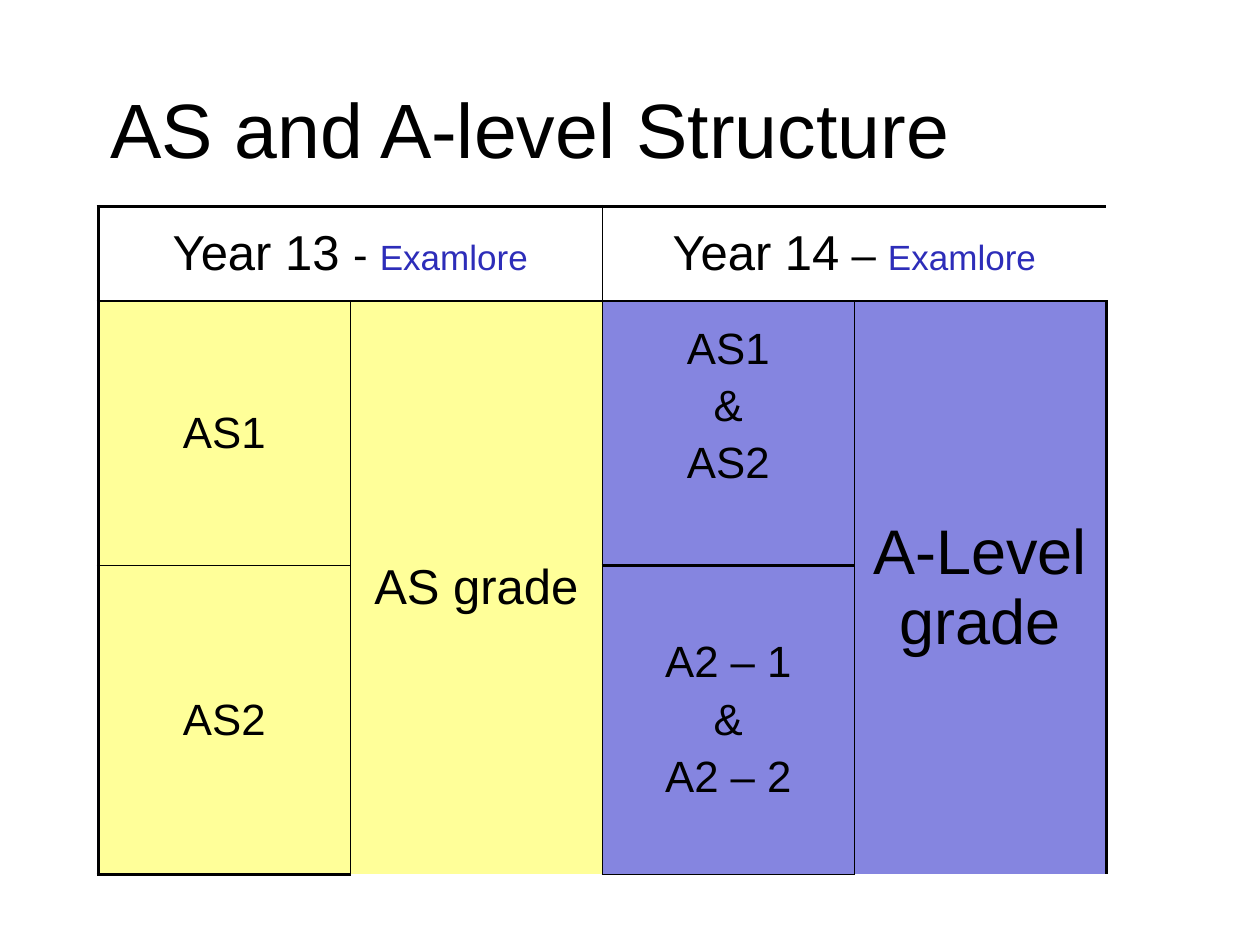
from lxml.etree import SubElement
from pptx import Presentation
from pptx.dml.color import RGBColor
from pptx.enum.text import MSO_ANCHOR as Anchor, PP_ALIGN as Align
from pptx.oxml.ns import qn
from pptx.util import Inches, Pt

TITLE = "AS and A-level Structure"
BLACK, BLUE, YELLOW, VIOLET = "000000", "2D2DB9", "FFFF99", "8585E0"
THIN, THICK = 1, 2.25
COLS = [2, 2, 2, 2]
ROWS = [0.75, 1.67, 0.43, 2.45]


def plain(size, *lines):
    return [[(line, size, BLACK)] for line in lines]


def heading(year, dash):
    return [[(year, 28, BLACK), (dash, 25, BLACK), ("Examlore", 20, BLUE)]]


# row, column, row span, column span, fill, paragraphs, borders (left, right, top, bottom)
BLOCKS = [
    (0, 0, 1, 2, None, heading("Year 13 ", "- "), (THICK, THIN, THICK, THIN)),
    (0, 2, 1, 2, None, heading("Year 14", " – "), (THIN, THICK, THICK, THIN)),
    (1, 0, 2, 1, YELLOW, plain(25, "AS1"), (THICK, THIN, THIN, THIN)),
    (1, 1, 3, 1, YELLOW, plain(28, "AS grade"), (THIN, THIN, THIN, THICK)),
    (1, 2, 1, 1, VIOLET, plain(25, "AS1", "&", "AS2"), (THIN, THIN, THIN, 0)),
    (1, 3, 3, 1, VIOLET, plain(36, "A-Level grade"), (THIN, THICK, THIN, THICK)),
    (2, 2, 1, 1, VIOLET, [], (THIN, THIN, 0, THICK)),
    (3, 0, 1, 1, YELLOW, plain(25, "AS2"), (THICK, THIN, THIN, THICK)),
    (3, 2, 1, 1, VIOLET, plain(25, "A2 – 1", "&", "A2 – 2"), (THIN, THIN, THICK, THIN)),
]


def rgb(value):
    return RGBColor.from_string(value)


def write(tf, paragraphs):
    for i, runs in enumerate(paragraphs):
        p = tf.paragraphs[0] if i == 0 else tf.add_paragraph()
        p.alignment = Align.CENTER
        p.font.name = "Arial"
        if i:
            p.space_before = Pt(runs[0][1] * 0.2)
        for text, size, color in runs:
            r = p.add_run()
            r.text = text
            r.font.name = "Arial"
            r.font.size = Pt(size)
            r.font.color.rgb = rgb(color)


def style_cell(cell, fill, borders):
    tc_pr = cell._tc.get_or_add_tcPr()
    for side, width in zip("LRTB", borders):
        ln = SubElement(tc_pr, qn(f"a:ln{side}"), w=str(Pt(width)))
        if width:
            solid = SubElement(ln, qn("a:solidFill"))
            SubElement(solid, qn("a:srgbClr"), val=BLACK)
        else:
            SubElement(ln, qn("a:noFill"))
    if fill:
        cell.fill.solid()
        cell.fill.fore_color.rgb = rgb(fill)
    else:
        cell.fill.background()


def add_block(table, row, col, height, width, fill, paragraphs, borders):
    last_row, last_col = row + height - 1, col + width - 1
    left, right, top, bottom = borders
    for i in range(row, last_row + 1):
        for j in range(col, last_col + 1):
            edges = (left * (j == col), right * (j == last_col),
                     top * (i == row), bottom * (i == last_row))
            style_cell(table.cell(i, j), fill, edges)
    cell = table.cell(row, col)
    if height * width > 1:
        cell.merge(table.cell(last_row, last_col))
    cell.vertical_anchor = Anchor.MIDDLE
    write(cell.text_frame, paragraphs)


def main():
    """Build the AS and A-level structure slide."""
    prs = Presentation()
    prs.slide_width, prs.slide_height = Inches(10), Inches(7.5)
    s = prs.slides.add_slide(prs.slide_layouts[6])

    title = s.shapes.add_textbox(Inches(0.39), Inches(0.39), Inches(7.64), Inches(1.25))
    tf = title.text_frame
    tf.word_wrap = True
    tf.vertical_anchor = Anchor.MIDDLE
    write(tf, plain(44, TITLE))

    table = s.shapes.add_table(len(ROWS), len(COLS), Inches(0.78), Inches(1.64),
                               Inches(sum(COLS)), Inches(sum(ROWS))).table
    table.first_row = table.horz_banding = False
    for column, width in zip(table.columns, COLS):
        column.width = Inches(width)
    for row, height in zip(table.rows, ROWS):
        row.height = Inches(height)
    for block in BLOCKS:
        add_block(table, *block)
    prs.save("out.pptx")


if __name__ == "__main__":
    main()
